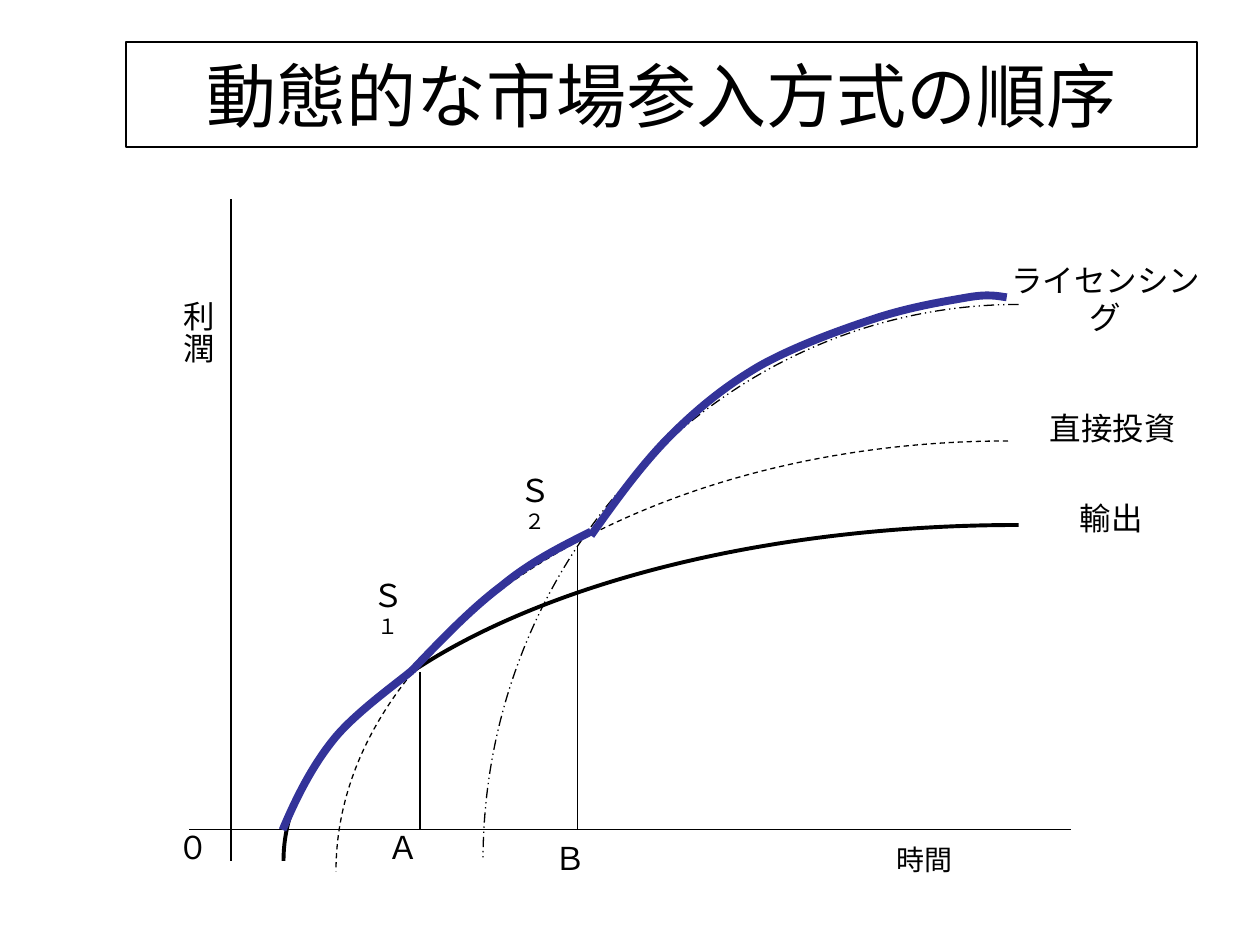
from dataclasses import dataclass
from typing import Optional

import pptx
import pptx.dml.color
import pptx.enum.dml
import pptx.enum.shapes
import pptx.enum.text
import pptx.oxml
import pptx.oxml.ns
import pptx.util

Pt = pptx.util.Pt
Dash = pptx.enum.dml.MSO_LINE
COLORS = {"ink": "000000", "path": "333399", "paper": "FFFFFF"}
KAPPA = 0.55


@dataclass
class Label:
    text: str
    left: float
    top: float
    width: float
    height: float = 28.8
    size: float = 18
    sub: str = ""
    wrap: bool = False
    vertical: bool = False


@dataclass
class Arc:
    left: float
    top: float
    width: float
    height: float
    weight: float = 0.75
    dash: Optional[Dash] = None


LABELS = [
    Label("時間", 504.7, 478, 46.8, 26.6, size=16),
    Label("利潤", 91.4, 164.9, 36, 43.2, vertical=True),
    Label("０", 94.3, 469.4, 26.6),
    Label("輸出", 609.8, 281.5, 50.4),
    Label("直接投資", 592.6, 230.4, 86.4),
    Label("ライセンシング", 569.5, 145.4, 124.6, wrap=True),
    Label("Ａ", 214.6, 469.4, 27.4),
    Label("Ｂ", 309.6, 475.9, 28.8),
    Label("Ｓ", 203.8, 325.4, 36, sub="１", wrap=True),
    Label("Ｓ", 288, 265.7, 36, sub="２", wrap=True),
]
RULES = [
    (108, 474, 612, 474),
    (132, 492, 132, 114),
    (240, 384, 240, 474),
    (330, 312, 330, 474),
]
PROFIT_ARCS = [
    Arc(162, 300, 420, 192, weight=2.25),
    Arc(192, 252, 384, 246, dash=Dash.DASH),
    Arc(276, 174, 306, 318, dash=Dash.DASH_DOT_DOT),
]
ENTRY_PATH = [
    [(161.5, 474.3), (169, 456.5), (178, 438.5), (190, 423.4),
     (202, 408), (227.5, 390), (235.4, 383.2)],
    [(235.4, 383.2), (252, 365.8), (269.3, 347.8), (286.6, 334.8),
     (303.1, 321.1), (320.4, 312.5), (337.7, 303.8)],
    [(337.7, 306), (352.1, 285.8), (366.5, 265.7), (383, 249.1),
     (398.9, 233.3), (414, 221), (433.4, 209.5),
     (453.6, 198), (481.7, 187.9), (501.8, 181.4),
     (522, 175), (540.7, 172.1), (553, 169.9),
     (565.2, 167.8), (570.2, 169.2), (575.3, 169.9)],
]


def rgb(name: str) -> pptx.dml.color.RGBColor:
    return pptx.dml.color.RGBColor.from_string(COLORS[name])


def set_line(sp, weight: float = 0.75, color: str = "ink", dash: Optional[Dash] = None) -> None:
    sp.line.color.rgb = rgb(color)
    sp.line.width = Pt(weight)
    if dash is not None:
        sp.line.dash_style = dash


def write(p, text: str, *, size: float = 18, font: str = "Times New Roman") -> None:
    p.alignment = pptx.enum.text.PP_ALIGN.CENTER
    r = p.add_run()
    r.text = text
    r.font.size = Pt(size)
    r.font.name = font
    r.font.color.rgb = rgb("ink")


def add_title(s, text: str) -> None:
    sp = s.shapes.add_shape(pptx.enum.shapes.MSO_SHAPE.RECTANGLE, Pt(72), Pt(24), Pt(612), Pt(60))
    sp.shadow.inherit = False
    sp.fill.background()
    set_line(sp)
    tf = sp.text_frame
    tf.word_wrap = True
    tf.vertical_anchor = pptx.enum.text.MSO_ANCHOR.MIDDLE
    write(tf.paragraphs[0], text, size=40, font="Arial")


def add_label(s, label: Label) -> None:
    sp = s.shapes.add_textbox(Pt(label.left), Pt(label.top), Pt(label.width), Pt(label.height))
    tf = sp.text_frame
    tf.word_wrap = label.wrap
    tf.auto_size = pptx.enum.text.MSO_AUTO_SIZE.SHAPE_TO_FIT_TEXT
    if label.vertical:
        sp.element.txBody.bodyPr.set("vert", "eaVert")
    p = tf.paragraphs[0]
    write(p, label.text, size=label.size)
    if label.sub:
        write(p, label.sub, size=12)


def add_rule(s, x1: float, y1: float, x2: float, y2: float) -> None:
    sp = s.shapes.add_connector(
        pptx.enum.shapes.MSO_CONNECTOR.STRAIGHT, Pt(x1), Pt(y1), Pt(x2), Pt(y2))
    set_line(sp)
    sp.element.spPr.append(pptx.oxml.parse_xml(
        f'<a:effectLst {pptx.oxml.ns.nsdecls("a")}/>'))


def add_curve(s, points: list[tuple[float, float]], **line) -> None:
    (x, y), *rest = [(Pt(px), Pt(py)) for px, py in points]
    builder = s.shapes.build_freeform(x, y)
    builder.add_line_segments(rest, close=False)
    sp = builder.convert_to_shape()
    steps = list(sp.element.iter(pptx.oxml.ns.qn("a:lnTo")))
    for i in range(0, len(steps), 3):
        bezier = pptx.oxml.parse_xml(f'<a:cubicBezTo {pptx.oxml.ns.nsdecls("a")}/>')
        steps[i].addprevious(bezier)
        for step in steps[i:i + 3]:
            bezier.append(step[0])
            step.getparent().remove(step)
    sp.shadow.inherit = False
    sp.fill.background()
    set_line(sp, **line)


def add_arc(s, arc: Arc) -> None:
    right, bottom = arc.left + arc.width, arc.top + arc.height
    points = [
        (right, arc.top),
        (right - KAPPA * arc.width, arc.top),
        (arc.left, bottom - KAPPA * arc.height),
        (arc.left, bottom),
    ]
    add_curve(s, points, weight=arc.weight, dash=arc.dash)


def main() -> None:
    prs = pptx.Presentation()
    prs.slide_width, prs.slide_height = Pt(720), Pt(540)
    s = prs.slides.add_slide(prs.slide_layouts[6])
    s.background.fill.solid()
    s.background.fill.fore_color.rgb = rgb("paper")
    add_title(s, "動態的な市場参入方式の順序")
    for rule in RULES:
        add_rule(s, *rule)
    for arc in PROFIT_ARCS:
        add_arc(s, arc)
    for label in LABELS:
        add_label(s, label)
    for points in ENTRY_PATH:
        add_curve(s, points, weight=4.5, color="path")
    prs.save("out.pptx")


if __name__ == "__main__":
    main()
